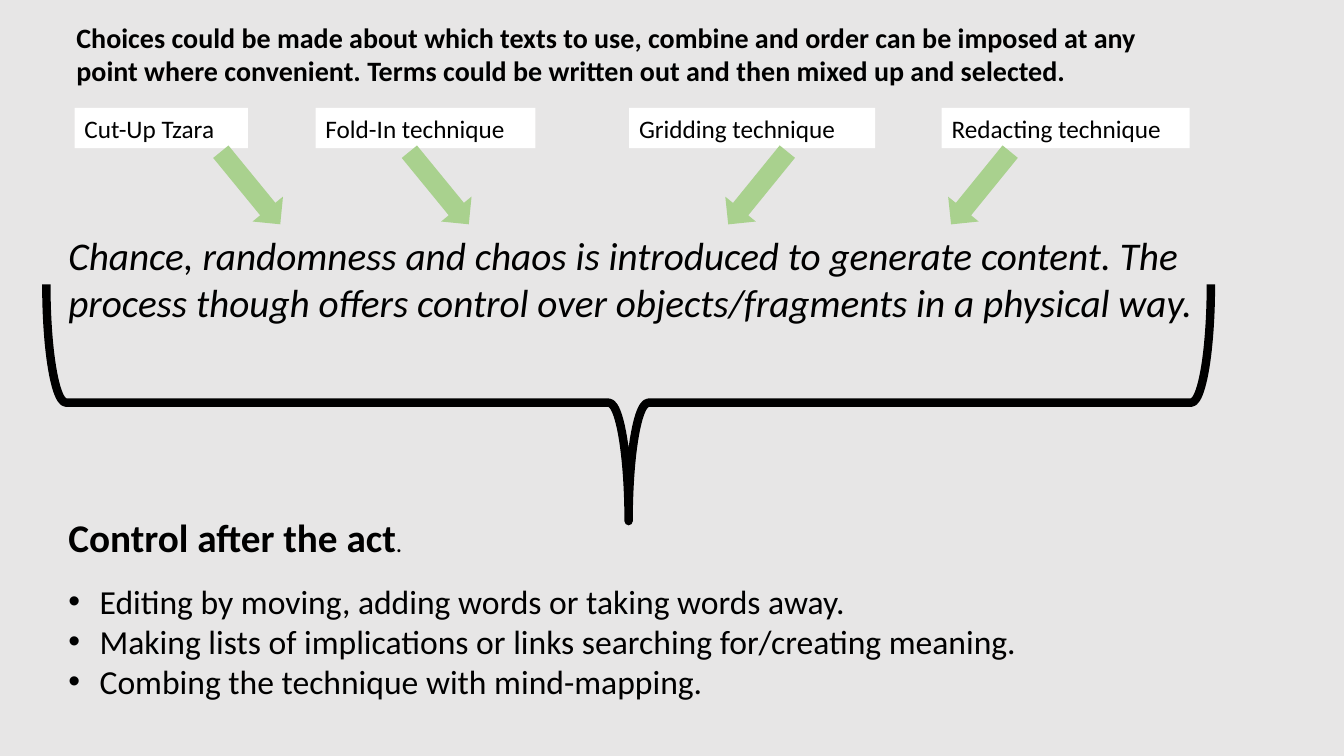
from collections import namedtuple

from lxml.etree import SubElement
from pptx import Presentation
from pptx.dml.color import RGBColor
from pptx.enum.shapes import MSO_SHAPE as Shape
from pptx.enum.text import PP_ALIGN as Align
from pptx.oxml.ns import qn
from pptx.util import Inches, Pt

WIDTH, HEIGHT = Inches(13.33), Inches(7.5)
BLACK, WHITE, GREEN, GREY = "000000", "FFFFFF", "A9D18E", "E7E6E6"
Box = namedtuple("Box", "left top width height")

TECHNIQUES = [
    ("Cut-Up Tzara", 5.55, 12.9, 9.6, 50.7),
    ("Fold-In technique", 23.48, 16.35, 5.7, 50.7),
    ("Gridding technique", 46.81, 18.3, 6.08, 129.1),
    ("Redacting technique", 70.07, 18.45, -0.6, 129.1),
]
INTRO = ("Choices could be made about which texts to use, combine and order can be "
         "imposed at any point where convenient. Terms could be written out and then "
         "mixed up and selected.")
CHANCE = ("Chance, randomness and chaos is introduced to generate content. The process "
          "though offers control over objects/fragments in a physical way.")
ACTIONS = [
    "Editing by moving, adding words or taking words away.",
    "Making lists of implications or links searching for/creating meaning.",
    "Combing the technique with mind-mapping.",
]


def color(value):
    """Turn a hex string into a colour."""
    return RGBColor.from_string(value)


def area(left, top, width, height):
    """Turn percentages of the slide's size into a box."""
    return Box(int(WIDTH * left / 100), int(HEIGHT * top / 100),
               int(WIDTH * width / 100), int(HEIGHT * height / 100))


def style(font, size, bold=False, italic=False):
    """Set the black slide font."""
    font.name, font.size, font.bold, font.italic = "Calibri", Pt(size), bold, italic
    font.color.rgb = color(BLACK)


def add_filled(page, kind, box, fill):
    """Add a preset shape with a plain fill and no outline."""
    shape = page.shapes.add_shape(kind, *box)
    shape.shadow.inherit = False
    shape.fill.solid()
    shape.fill.fore_color.rgb = color(fill)
    shape.line.fill.background()
    return shape


def add_text(page, box, text, size, bold=False, italic=False):
    """Add a wrapped text box holding one paragraph."""
    frame = page.shapes.add_textbox(*box).text_frame
    frame.word_wrap = True
    para = frame.paragraphs[0]
    para.text = text
    style(para.font, size, bold, italic)
    return para


def add_technique(page, box, text, shift, turn):
    """Add a technique label with a slanted arrow below it."""
    label = add_filled(page, Shape.RECTANGLE, box, WHITE)
    label.text_frame.word_wrap = True
    para = label.text_frame.paragraphs[0]
    para.text, para.alignment = text, Align.LEFT
    style(para.font, 18)
    offset = area(shift, 8, 6.98, 5.2)
    arrow_box = offset._replace(left=box.left + offset.left, top=box.top + offset.top)
    add_filled(page, Shape.RIGHT_ARROW, arrow_box, GREEN).rotation = turn


def add_brace(page, box):
    """Add a brace that fills the box and points down."""
    left = box.left + (box.width - box.height) // 2
    top = box.top + (box.height - box.width) // 2
    brace = page.shapes.add_shape(Shape.LEFT_BRACE, left, top, box.height, box.width)
    brace.shadow.inherit = False
    brace.rotation = 270
    brace.fill.background()
    brace.line.color.rgb = color(BLACK)
    brace.line.width = Pt(6)


def add_heading(page, box):
    """Add the heading with its small full stop."""
    para = add_text(page, box, "Control after the act", 28, bold=True)
    span = para.add_run()
    span.text = "."
    span.font.size, span.font.bold = Pt(18), False


def add_actions(page, box):
    """Add the bulleted list of actions."""
    frame = page.shapes.add_textbox(*box).text_frame
    frame.word_wrap = True
    for index, action in enumerate(ACTIONS):
        para = frame.add_paragraph() if index else frame.paragraphs[0]
        para.text = action
        properties = para._p.get_or_add_pPr()
        properties.set("marL", str(Inches(0.31)))
        properties.set("indent", str(Inches(-0.31)))
        SubElement(properties, qn("a:buFont"), typeface="Arial")
        SubElement(properties, qn("a:buChar"), char="•")
        style(para.font, 24)


def main():
    """Build and save the slide."""
    deck = Presentation()
    deck.slide_width, deck.slide_height = WIDTH, HEIGHT
    page = deck.slides.add_slide(deck.slide_layouts[6])
    page.background.fill.solid()
    page.background.fill.fore_color.rgb = color(GREY)
    add_brace(page, area(3.45, 37.6, 86.65, 31.33))
    add_actions(page, area(4.35, 76.13, 86.42, 17.47))
    add_heading(page, area(4.35, 67.2, 27.31, 7.6))
    add_text(page, area(4.95, 2, 80.72, 10.27), INTRO, 20, bold=True)
    add_text(page, area(4.35, 30, 87.7, 13.87), CHANCE, 28, italic=True)
    for text, left, width, shift, turn in TECHNIQUES:
        add_technique(page, area(left, 14.27, width, 5.33), text, shift, turn)
    deck.save("out.pptx")


if __name__ == "__main__":
    main()
